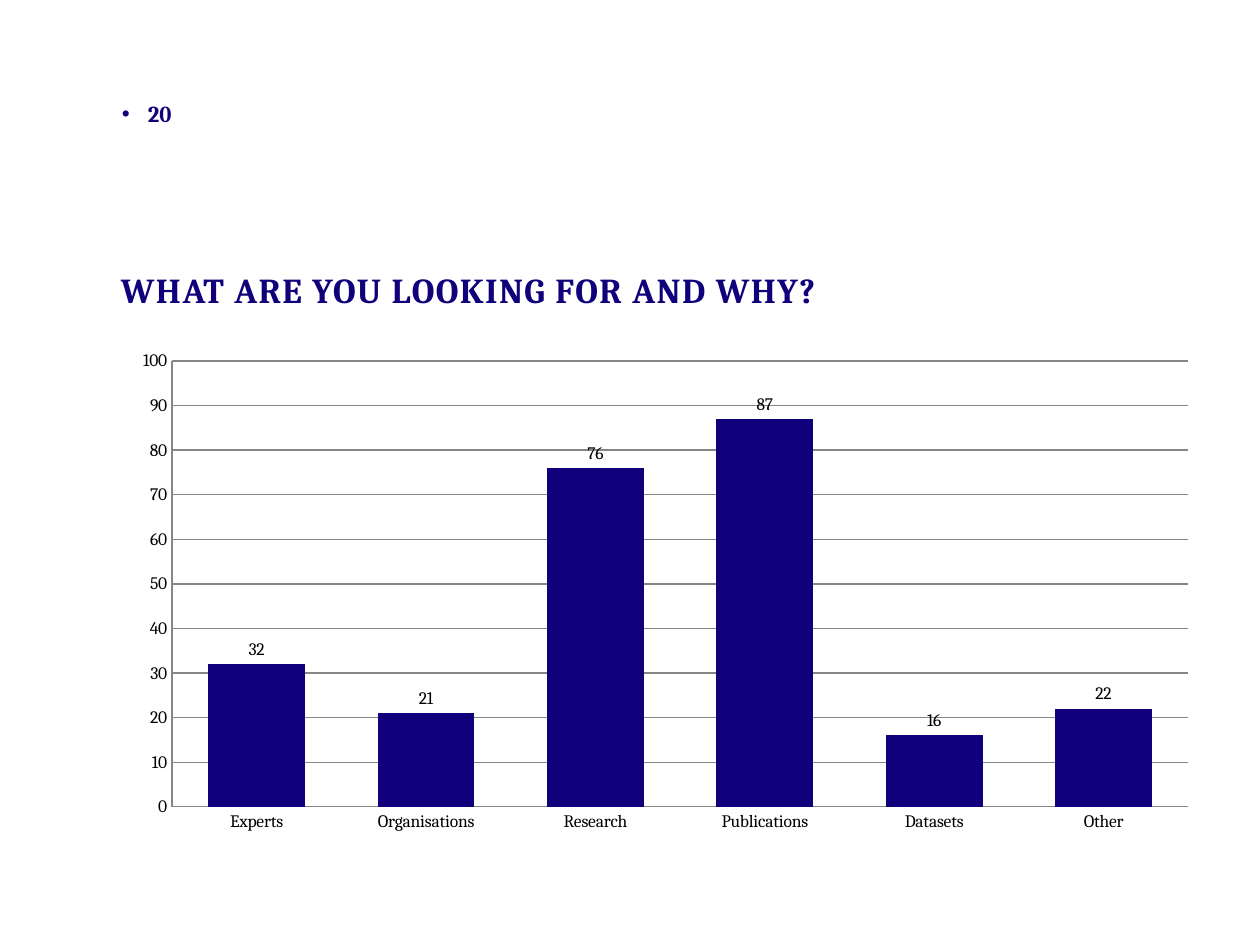
import pptx
import pptx.chart.data
import pptx.dml.color
import pptx.enum.chart
import pptx.enum.text
import pptx.oxml
import pptx.oxml.ns
import pptx.util

EMU_PER_PX = 914400 / 126
FONT = "Cambria"
NAVY, BLACK, GREY = "10007B", "000000", "868686"
COUNTS = {"Experts": 32, "Organisations": 21, "Research": 76,
          "Publications": 87, "Datasets": 16, "Other": 22}


def px(n):
    return pptx.util.Emu(round(n * EMU_PER_PX))


def rgb(value):
    return pptx.dml.color.RGBColor.from_string(value)


def style_font(font, size, color, bold=False):
    font.name = FONT
    font.size = pptx.util.Pt(size)
    font.bold = bold
    font.color.rgb = rgb(color)


def fill_placeholder(sp, box, text, size):
    """Place a placeholder, write one bold run and return its paragraph."""
    sp.left, sp.top, sp.width, sp.height = map(px, box)
    tf = sp.text_frame
    tf.margin_left = tf.margin_top = tf.margin_right = tf.margin_bottom = 0
    tf.vertical_anchor = pptx.enum.text.MSO_ANCHOR.TOP
    tf.auto_size = pptx.enum.text.MSO_AUTO_SIZE.NONE
    p = tf.paragraphs[0]
    p.alignment = pptx.enum.text.PP_ALIGN.LEFT
    p.space_before = pptx.util.Pt(0)
    r = p.add_run()
    r.text = text
    style_font(r.font, size, NAVY, bold=True)
    return p


def add_title(s):
    p = fill_placeholder(s.shapes.title, (121, 255, 1079, 70),
                         "WHAT ARE YOU LOOKING FOR AND WHY?", 20)
    p.line_spacing = pptx.util.Pt(32)
    p.runs[0].font._element.set("spc", "80")
    s.shapes.title.text_frame.word_wrap = False


def add_bullet(s):
    p = fill_placeholder(s.placeholders[1], (122, 100, 68, 65), "20", 13)
    pPr = p._p.get_or_add_pPr()
    pPr.set("marL", str(px(26)))
    pPr.set("indent", str(-px(26)))


def set_plot_layout(chart, **fractions):
    """Fix the inner plot area as fractions of the chart frame."""
    plot_area = chart._chartSpace.chart.plotArea
    for old in plot_area.findall(pptx.oxml.ns.qn("c:layout")):
        plot_area.remove(old)
    sizes = "".join(f'<c:{k} val="{v}"/>' for k, v in fractions.items())
    plot_area.insert(0, pptx.oxml.parse_xml(
        f'<c:layout {pptx.oxml.ns.nsdecls("c")}><c:manualLayout>'
        '<c:layoutTarget val="inner"/><c:xMode val="edge"/><c:yMode val="edge"/>'
        f'{sizes}</c:manualLayout></c:layout>'))


def style_line(line):
    line.color.rgb = rgb(GREY)
    line.width = pptx.util.Pt(0.75)


def style_axes(chart):
    for axis in (chart.category_axis, chart.value_axis):
        axis.major_tick_mark = pptx.enum.chart.XL_TICK_MARK.NONE
        axis.minor_tick_mark = pptx.enum.chart.XL_TICK_MARK.NONE
        style_font(axis.tick_labels.font, 10, BLACK)
        style_line(axis.format.line)
    axis = chart.value_axis
    axis.minimum_scale, axis.maximum_scale, axis.major_unit = 0, 100, 10
    axis.has_major_gridlines = True
    style_line(axis.major_gridlines.format.line)


def add_column_chart(s):
    data = pptx.chart.data.CategoryChartData()
    data.categories = list(COUNTS)
    data.add_series("Series 1", list(COUNTS.values()))
    chart = s.shapes.add_chart(
        pptx.enum.chart.XL_CHART_TYPE.COLUMN_CLUSTERED,
        px(122), px(341), px(1087), px(501), data).chart
    chart.has_title = False
    chart.has_legend = False
    style_font(chart.font, 10, BLACK)
    set_plot_layout(chart, x=0.046, y=0.04, w=0.935, h=0.89)
    style_axes(chart)

    plot = chart.plots[0]
    plot.vary_by_categories = False
    plot.gap_width, plot.overlap = 75, 40
    fill = plot.series[0].format.fill
    fill.solid()
    fill.fore_color.rgb = rgb(NAVY)
    labels = plot.series[0].data_labels
    labels.show_value = True
    labels.position = pptx.enum.chart.XL_LABEL_POSITION.OUTSIDE_END
    style_font(labels.font, 10, BLACK)


def main():
    prs = pptx.Presentation()
    prs.slide_width, prs.slide_height = px(1260), px(945)
    s = prs.slides.add_slide(prs.slide_layouts[1])
    add_title(s)
    add_bullet(s)
    add_column_chart(s)
    prs.save("out.pptx")


if __name__ == "__main__":
    main()
